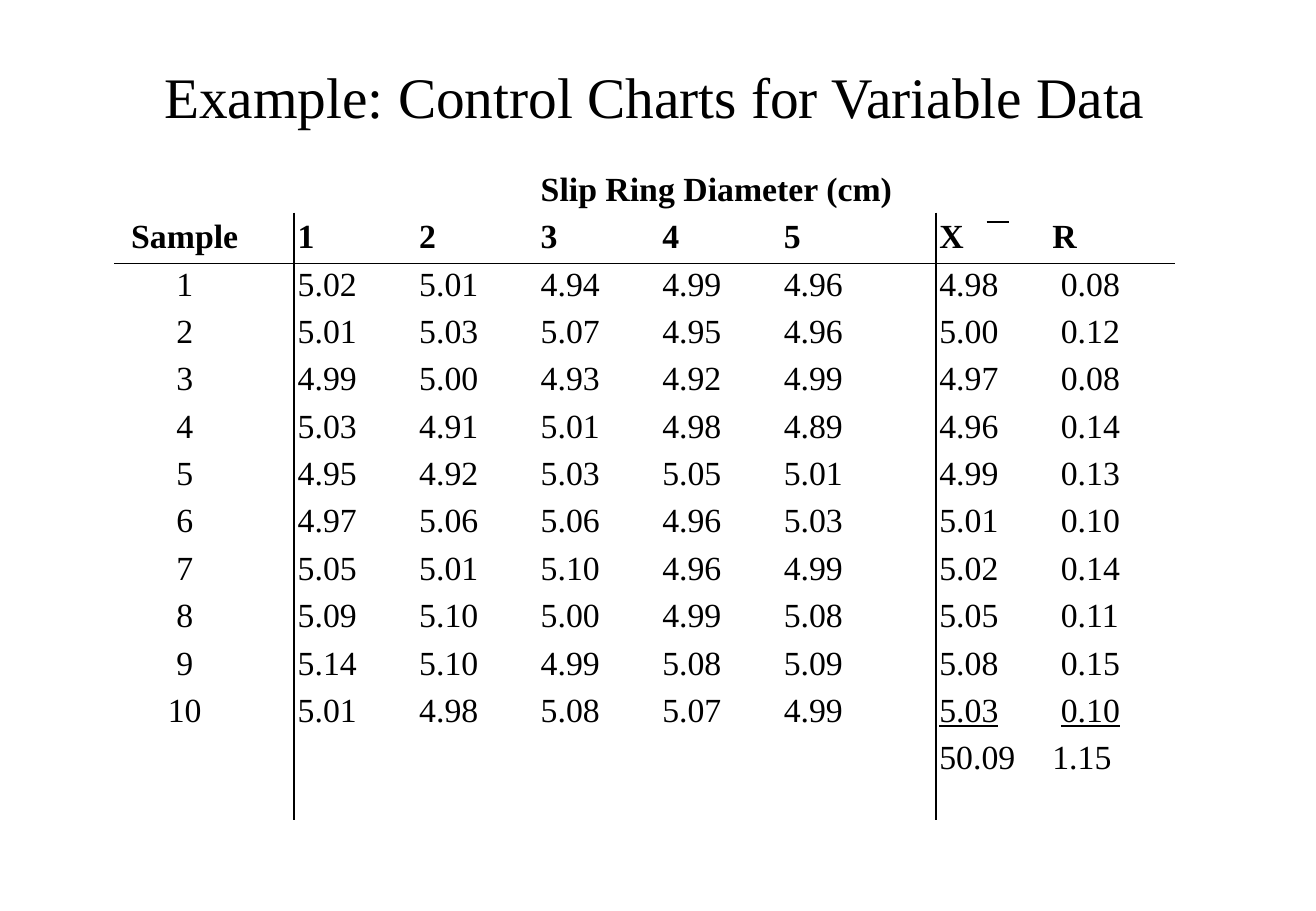
from lxml.etree import SubElement
from pptx import Presentation
from pptx.dml.color import RGBColor
from pptx.enum.shapes import MSO_CONNECTOR
from pptx.enum.text import MSO_ANCHOR, PP_ALIGN
from pptx.oxml.ns import qn
from pptx.util import Inches, Pt

FONT = "Times New Roman"
BLACK = "000000"
COLUMN_WIDTHS = [1.8, 1, 1, 1, 1, 1.28, 0.93, 1.04]
ROW_HEIGHT = 0.39
HEADINGS = ["Sample", "1", "2", "3", "4", "5", "X", "R"]
MEASUREMENTS = [
    "5.02 5.01 4.94 4.99 4.96 4.98 0.08",
    "5.01 5.03 5.07 4.95 4.96 5.00 0.12",
    "4.99 5.00 4.93 4.92 4.99 4.97 0.08",
    "5.03 4.91 5.01 4.98 4.89 4.96 0.14",
    "4.95 4.92 5.03 5.05 5.01 4.99 0.13",
    "4.97 5.06 5.06 4.96 5.03 5.01 0.10",
    "5.05 5.01 5.10 4.96 4.99 5.02 0.14",
    "5.09 5.10 5.00 4.99 5.08 5.05 0.11",
    "5.14 5.10 4.99 5.08 5.09 5.08 0.15",
    "5.01 4.98 5.08 5.07 4.99 5.03 0.10",
]
TOTALS = [""] * 6 + ["50.09", "1.15"]
RULES = [
    (8.12, 1.83, 8.3, 1.83),  # bar of X-bar
    (7.7, 1.75, 7.7, 6.75),
    (2.42, 1.75, 2.42, 6.75),
    (0.94, 2.17, 9.67, 2.17),
]


def color(hex_string):
    return RGBColor.from_string(hex_string)


def set_text(frame, text, size, align, bold=False, underline=False):
    paragraph = frame.paragraphs[0]
    paragraph.text = text
    paragraph.alignment = align
    font = paragraph.font
    font.name = FONT
    font.size = Pt(size)
    font.bold = bold
    font.underline = underline
    font.color.rgb = color(BLACK)


def add_title(slide, text):
    title = slide.shapes.add_textbox(Inches(0.61), Inches(0.25), Inches(9.56), Inches(1.08))
    title.text_frame.word_wrap = True
    title.text_frame.vertical_anchor = MSO_ANCHOR.MIDDLE
    set_text(title.text_frame, text, 34, PP_ALIGN.CENTER)


def fill_cell(cell, text, align, indent, bold, underline):
    cell.fill.background()
    cell.margin_left = Inches(indent)
    cell.margin_right = cell.margin_top = cell.margin_bottom = 0
    cell.vertical_anchor = MSO_ANCHOR.MIDDLE
    set_text(cell.text_frame, text, 20, align, bold, underline)


def add_measurement_table(slide):
    samples = [[str(number), *line.split()] for number, line in enumerate(MEASUREMENTS, 1)]
    caption = ["", "", "", "Slip Ring Diameter (cm)", "", "", "", ""]
    rows = [caption, HEADINGS, *samples, TOTALS]
    last_sample = len(rows) - 2
    table = slide.shapes.add_table(
        len(rows), len(COLUMN_WIDTHS), Inches(0.62), Inches(1.37),
        Inches(sum(COLUMN_WIDTHS)), Inches(ROW_HEIGHT * len(rows))).table
    table.first_row = table.horz_banding = False
    for column, width in zip(table.columns, COLUMN_WIDTHS):
        column.width = Inches(width)
    for r, values in enumerate(rows):
        table.rows[r].height = Inches(ROW_HEIGHT)
        for c, value in enumerate(values):
            is_range = c == 7 and 2 <= r <= last_sample
            fill_cell(table.cell(r, c), value,
                      align=PP_ALIGN.LEFT if c else PP_ALIGN.CENTER,
                      indent=0.1 if is_range else 0.03 if c else 0,
                      bold=r < 2,
                      underline=r == last_sample and c >= 6)
    table.cell(0, 3).merge(table.cell(0, 5))


def add_rule(slide, x1, y1, x2, y2):
    rule = slide.shapes.add_connector(
        MSO_CONNECTOR.STRAIGHT, Inches(x1), Inches(y1), Inches(x2), Inches(y2))
    rule.line.color.rgb = color(BLACK)
    rule.line.width = Pt(1)
    SubElement(rule._element.spPr, qn("a:effectLst"))


def main():
    presentation = Presentation()
    presentation.slide_width = Inches(10.83)
    presentation.slide_height = Inches(7.5)
    slide = presentation.slides.add_slide(presentation.slide_layouts[6])
    add_title(slide, "Example: Control Charts for Variable Data")
    add_measurement_table(slide)
    for ends in RULES:
        add_rule(slide, *ends)
    presentation.save("out.pptx")


if __name__ == "__main__":
    main()
